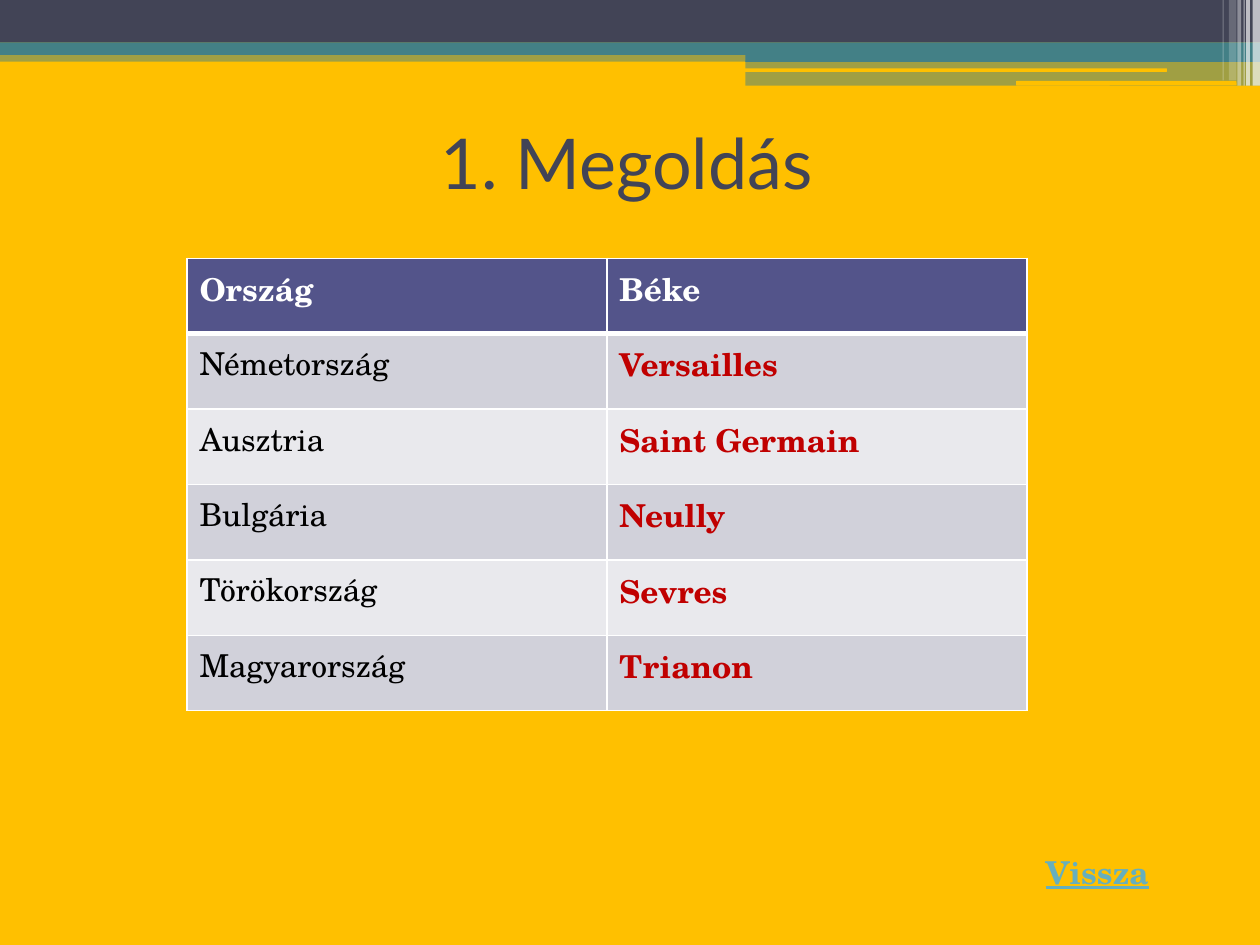
import pptx
import pptx.dml.color
import pptx.enum.shapes
import pptx.enum.text
import pptx.oxml
import pptx.oxml.ns
import pptx.util
from lxml import etree

Pt = pptx.util.Pt
RGBColor = pptx.dml.color.RGBColor
MSO_SHAPE = pptx.enum.shapes.MSO_SHAPE

AMBER = RGBColor(0xFF, 0xC0, 0x00)
SLATE = RGBColor(0x42, 0x44, 0x56)
TEAL = RGBColor(0x43, 0x80, 0x86)
WHITE = RGBColor(0xFF, 0xFF, 0xFF)
BLACK = RGBColor(0x00, 0x00, 0x00)
INDIGO = RGBColor(0x53, 0x54, 0x8A)
ROW_DARK = RGBColor(0xD1, 0xD1, 0xDA)
ROW_LIGHT = RGBColor(0xE9, 0xE9, 0xED)
RED = RGBColor(0xC0, 0x00, 0x00)
LINK_BLUE = RGBColor(0x67, 0xAF, 0xBD)

TITLE_FONT = "Lato"
BODY_FONT = "TeX Gyre Schola"

# left, top, width, height, colour, opacity in percent
BANDS = [
    (0, 28.8, 720, 6.5, TEAL, 50),
    (0, 0, 720, 24.4, SLATE, 100),
    (0, 24.2, 720, 7.2, TEAL, 100),
    (426, 28.2, 294, 7.2, TEAL, 100),
    (426, 34.7, 294, 14.2, TEAL, 50),
]
ROUNDED_BARS = [(425.6, 39.1, 241.2, 2), (580.6, 46.3, 126, 2.6)]
# left, width, height, opacity in percent
STRIPES = [
    (715.8, 4.2, 49, 65),
    (712.1, 2.2, 49, 65),
    (710.6, 0.7, 49, 60),
    (707.1, 2.2, 49, 40),
    (702.2, 4.3, 46, 20),
    (698.6, 0.7, 46, 30),
]
TREATIES = [
    ("Ország", "Béke"),
    ("Németország", "Versailles"),
    ("Ausztria", "Saint Germain"),
    ("Bulgária", "Neully"),
    ("Törökország", "Sevres"),
    ("Magyarország", "Trianon"),
]


def add_block(slide, left, top, width, height, colour, opacity=100,
              preset=MSO_SHAPE.RECTANGLE):
    block = slide.shapes.add_shape(preset, Pt(left), Pt(top), Pt(width), Pt(height))
    block.shadow.inherit = False
    block.line.fill.background()
    block.fill.solid()
    block.fill.fore_color.rgb = colour
    if opacity < 100:
        srgb = block.fill._xPr.find(".//" + pptx.oxml.ns.qn("a:srgbClr"))
        etree.SubElement(srgb, pptx.oxml.ns.qn("a:alpha"), val=str(opacity * 1000))
    return block


def write(frame, text, font_name, size, colour, bold=False):
    frame.text = text
    font = frame.paragraphs[0].runs[0].font
    font.name = font_name
    font.size = Pt(size)
    font.color.rgb = colour
    font.bold = bold
    return font


def add_header_art(slide):
    for band in BANDS:
        add_block(slide, *band)
    for bar in ROUNDED_BARS:
        add_block(slide, *bar, AMBER, preset=MSO_SHAPE.ROUNDED_RECTANGLE)
    for left, width, height, opacity in STRIPES:
        add_block(slide, left, 0, width, height, WHITE, opacity)


def add_title(slide):
    title = slide.shapes.add_textbox(Pt(34), Pt(50.4), Pt(648), Pt(84.2))
    frame = title.text_frame
    frame.word_wrap = True
    frame.vertical_anchor = pptx.enum.text.MSO_ANCHOR.MIDDLE
    write(frame, "1. Megoldás", TITLE_FONT, 40, SLATE)
    frame.paragraphs[0].alignment = pptx.enum.text.PP_ALIGN.CENTER


def set_borders(cell, bottom, top):
    """Rule the cell in white; the sides are 1 pt wide."""
    properties = cell._tc.get_or_add_tcPr()
    widths = {"lnL": 1, "lnR": 1, "lnT": top, "lnB": bottom}
    for position, (edge, width) in enumerate(widths.items()):
        properties.insert(position, pptx.oxml.parse_xml(
            f'<a:{edge} {pptx.oxml.ns.nsdecls("a")} w="{Pt(width)}">'
            f'<a:solidFill><a:srgbClr val="{WHITE}"/></a:solidFill></a:{edge}>'))


def add_treaty_table(slide):
    table = slide.shapes.add_table(len(TREATIES), 2, Pt(106.8), Pt(147.6),
                                   Pt(480), Pt(258.6)).table
    for row, texts in enumerate(TREATIES):
        for column, text in enumerate(texts):
            cell = table.cell(row, column)
            if row == 0:
                fill, colour = INDIGO, WHITE
            else:
                fill = ROW_DARK if row % 2 else ROW_LIGHT
                colour = RED if column else BLACK
            cell.fill.solid()
            cell.fill.fore_color.rgb = fill
            write(cell.text_frame, text, BODY_FONT, 18, colour,
                  bold=row == 0 or column == 1)
            set_borders(cell, bottom=3 if row == 0 else 1, top=3 if row == 1 else 1)


def add_back_label(slide):
    label = add_block(slide, 590.4, 483.8, 74, 29, AMBER)
    frame = label.text_frame
    frame.word_wrap = False
    frame.vertical_anchor = pptx.enum.text.MSO_ANCHOR.TOP
    font = write(frame, "Vissza", BODY_FONT, 18, LINK_BLUE, bold=True)
    font.underline = True
    frame.paragraphs[0].alignment = pptx.enum.text.PP_ALIGN.LEFT


def main():
    deck = pptx.Presentation()
    deck.slide_width, deck.slide_height = Pt(720), Pt(540)
    slide = deck.slides.add_slide(deck.slide_layouts[6])
    slide.background.fill.solid()
    slide.background.fill.fore_color.rgb = AMBER
    add_header_art(slide)
    add_title(slide)
    add_back_label(slide)
    add_treaty_table(slide)
    deck.save("out.pptx")


if __name__ == "__main__":
    main()
